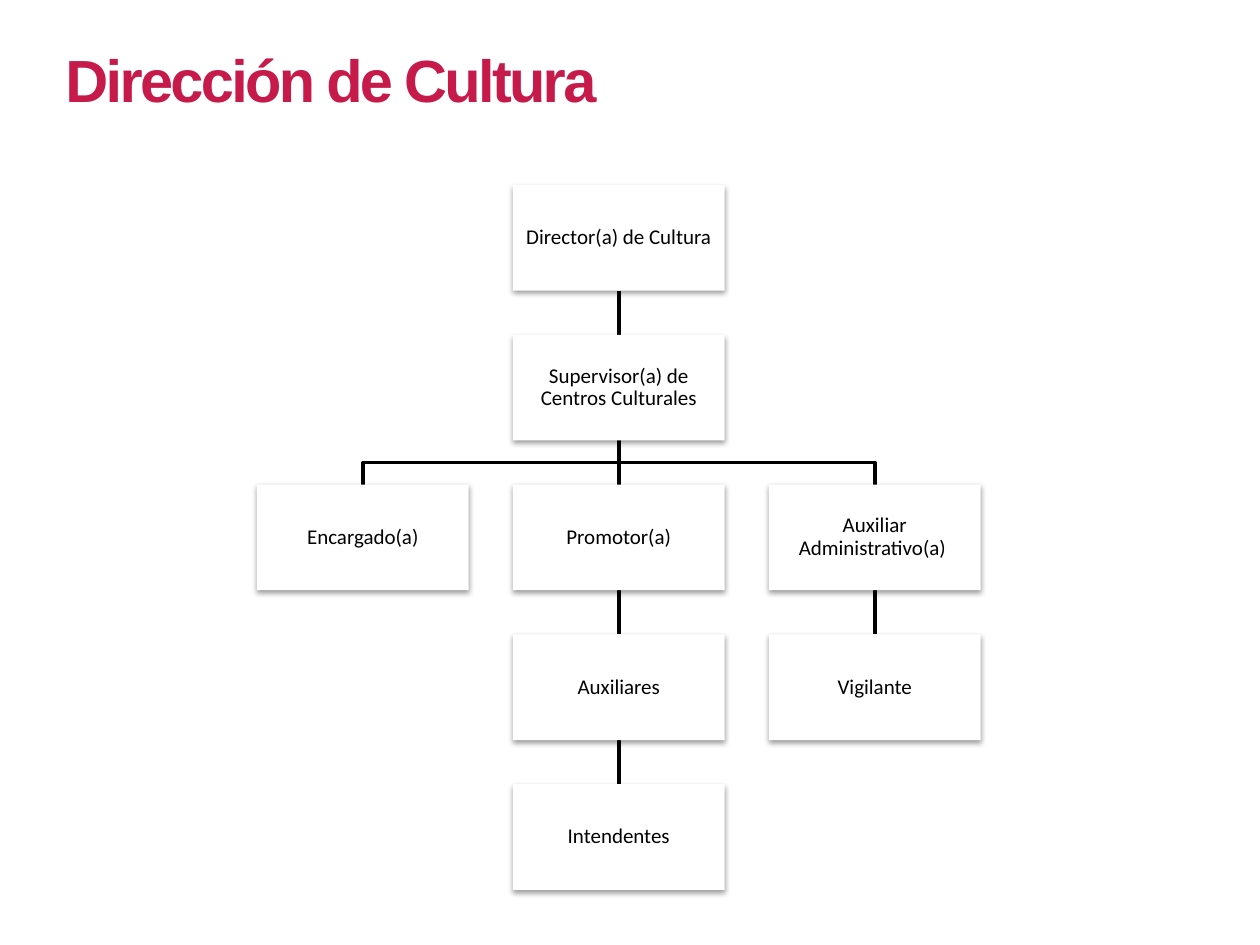
"""Build the organisation chart slide of the Dirección de Cultura."""
from lxml.etree import SubElement
from pptx import Presentation
from pptx.dml.color import RGBColor
from pptx.enum.shapes import MSO_CONNECTOR, MSO_SHAPE
from pptx.enum.text import MSO_ANCHOR, PP_ALIGN
from pptx.oxml.ns import qn
from pptx.util import Cm, Pt

CRIMSON = RGBColor(0xC5, 0x1A, 0x4A)
BLACK = RGBColor(0x00, 0x00, 0x00)
WHITE = RGBColor(0xFF, 0xFF, 0xFF)

CHART_LEFT, CHART_TOP = 5.18, 3.73
POST_WIDTH, POST_HEIGHT = 4.27, 2.13
COLUMN_STEP, ROW_STEP = 5.16, 3.02

TITLE_FONT = {"name": "Arial", "size": Pt(34), "bold": True}
POST_FONT = {"name": "Calibri", "size": Pt(12), "bold": False}
POST_FRAME = {
    "word_wrap": True,
    "vertical_anchor": MSO_ANCHOR.MIDDLE,
    "margin_left": Cm(0.03),
    "margin_right": Cm(0.03),
    "margin_top": Cm(0.03),
    "margin_bottom": Cm(0.03),
}
POST_PARAGRAPH = {"alignment": PP_ALIGN.CENTER, "line_spacing": 0.9}
SHADOW = {"blurRad": "40000", "dist": "20000", "dir": "5400000", "rotWithShape": "0"}

POSTS = [
    ("Director(a) de Cultura", 1, 0),
    ("Supervisor(a) de Centros Culturales", 1, 1),
    ("Encargado(a)", 0, 2),
    ("Promotor(a)", 1, 2),
    ("Auxiliares", 1, 3),
    ("Intendentes", 1, 4),
    ("Auxiliar Administrativo(a) ", 2, 2),
    ("Vigilante", 2, 3),
]
DIRECT_REPORTS = [(2, 2), (1, 3), (1, 2), (1, 1), (1, 0)]
SIDE_BRANCHES = [(1, 2, 1), (1, 0, 1)]


def apply_format(target, values):
    for attribute, value in values.items():
        setattr(target, attribute, value)


def link_ends(column, row):
    x = CHART_LEFT + column * COLUMN_STEP + POST_WIDTH / 2
    top = CHART_TOP + row * ROW_STEP
    return Cm(x), Cm(top + POST_HEIGHT), Cm(top + ROW_STEP)


deck = Presentation()
apply_format(deck, {"slide_width": Cm(25.4), "slide_height": Cm(19.05)})
slide = deck.slides.add_slide(deck.slide_layouts[6])

heading = slide.shapes.add_textbox(Cm(1.07), Cm(0.74), Cm(17.3), Cm(1.75))
heading.text_frame.word_wrap = True
heading_words = heading.text_frame.paragraphs[0].add_run()
heading_words.text = "Dirección de Cultura"
apply_format(heading_words.font, TITLE_FONT)
heading_words.font.color.rgb = CRIMSON
heading_words.font._element.set("spc", "-150")

for column, row in DIRECT_REPORTS:
    x, start, end = link_ends(column, row)
    link = slide.shapes.add_connector(MSO_CONNECTOR.STRAIGHT, x, start, x, end)
    link.line.color.rgb = BLACK
    link.line.width = Pt(2)
    SubElement(link._element.spPr, qn("a:effectLst"))

for origin, column, row in SIDE_BRANCHES:
    x, start, end = link_ends(origin, row)
    side_x = link_ends(column, row)[0]
    middle = (start + end) // 2
    outline = slide.shapes.build_freeform(x, start)
    outline.add_line_segments([(x, middle), (side_x, middle), (side_x, end)], close=False)
    branch = outline.convert_to_shape()
    branch.fill.background()
    branch.line.color.rgb = BLACK
    branch.line.width = Pt(2)
    branch.shadow.inherit = False

for role, column, row in POSTS:
    post = slide.shapes.add_shape(
        MSO_SHAPE.RECTANGLE,
        Cm(CHART_LEFT + column * COLUMN_STEP),
        Cm(CHART_TOP + row * ROW_STEP),
        Cm(POST_WIDTH),
        Cm(POST_HEIGHT),
    )
    post.fill.solid()
    post.fill.fore_color.rgb = WHITE
    post.line.fill.background()
    post.shadow.inherit = False
    effects = post._element.spPr.find(qn("a:effectLst"))
    shade = SubElement(effects, qn("a:outerShdw"), SHADOW)
    shade_color = SubElement(shade, qn("a:srgbClr"), val=str(BLACK))
    SubElement(shade_color, qn("a:alpha"), val="38000")

    apply_format(post.text_frame, POST_FRAME)
    role_line = post.text_frame.paragraphs[0]
    apply_format(role_line, POST_PARAGRAPH)
    role_words = role_line.add_run()
    role_words.text = role
    apply_format(role_words.font, POST_FONT)
    role_words.font.color.rgb = BLACK

deck.save("out.pptx")
